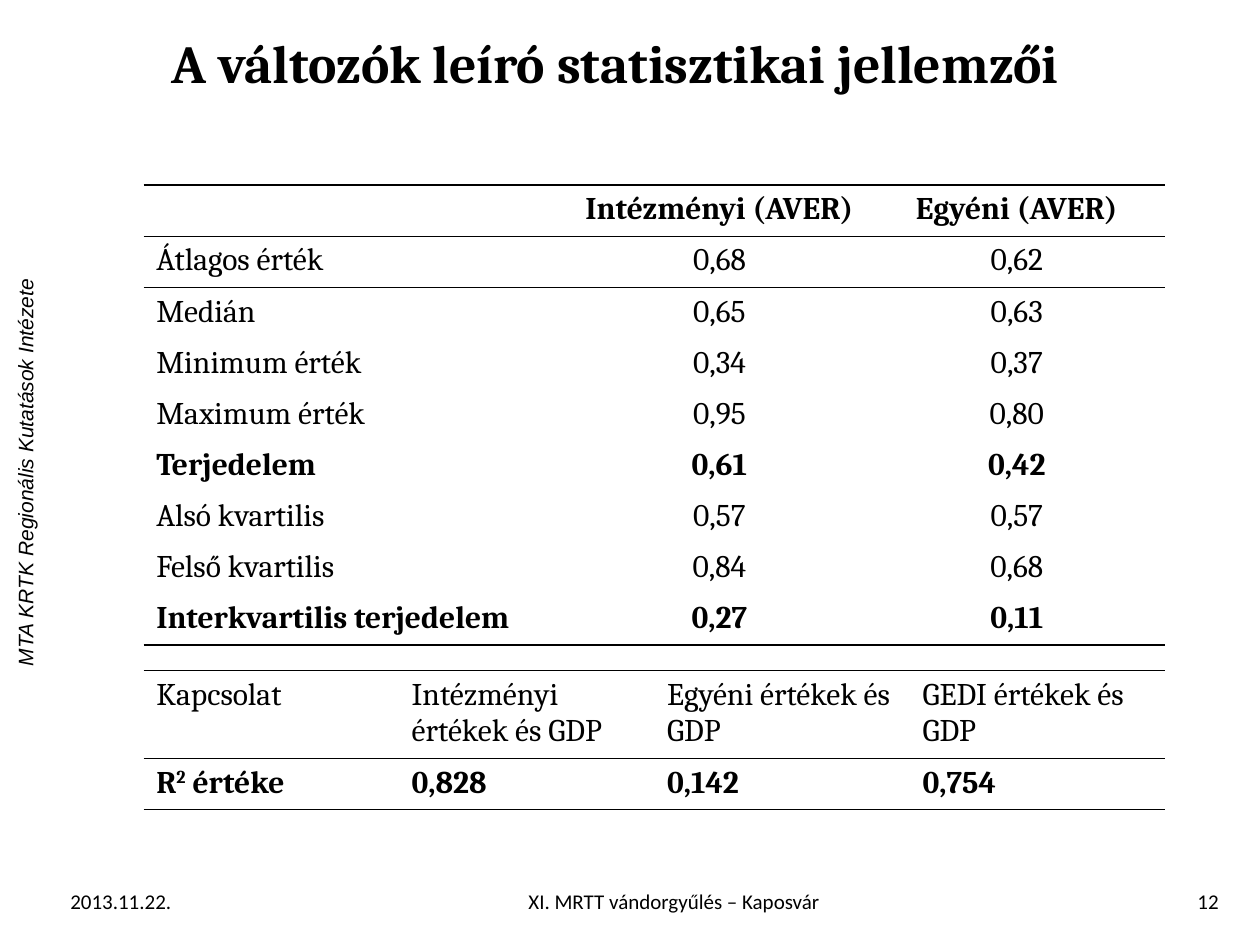
from dataclasses import dataclass

from lxml.etree import SubElement
from pptx import Presentation
from pptx.dml.color import RGBColor
from pptx.enum.text import MSO_ANCHOR, PP_ALIGN
from pptx.oxml.ns import qn
from pptx.util import Inches, Pt


@dataclass(frozen=True)
class Theme:
    ink: str = "000000"
    serif: str = "Cambria"
    sans: str = "Calibri"
    side: str = "Arial"
    title_size: float = 30.6
    table_size: float = 18
    small_size: float = 12
    rule_width: float = 1


@dataclass(frozen=True)
class Box:
    """Area in grid units; the slide is 100 columns by 75 rows."""
    left: float
    top: float
    width: float
    height: float

    def lengths(self):
        return [grid(value) for value in (self.left, self.top, self.width, self.height)]


THEME = Theme()
COLUMNS, ROWS = 100, 75
PLAIN_TABLE_STYLE = "{2D5ABB26-0587-4C30-8999-92F81FD0307C}"

STATISTICS = [
    ("", "Intézményi (AVER)", "Egyéni (AVER)"),
    ("Átlagos érték", "0,68", "0,62"),
    ("Medián", "0,65", "0,63"),
    ("Minimum érték", "0,34", "0,37"),
    ("Maximum érték", "0,95", "0,80"),
    ("Terjedelem", "0,61", "0,42"),
    ("Alsó kvartilis", "0,57", "0,57"),
    ("Felső kvartilis", "0,84", "0,68"),
    ("Interkvartilis terjedelem", "0,27", "0,11"),
]
BOLD_STATISTICS = {0, 5, 8}
RELATIONS = [
    ("Kapcsolat", "Intézményi értékek és GDP", "Egyéni értékek és GDP", "GEDI értékek és GDP"),
    ("", "0,828", "0,142", "0,754"),
]


def grid(units):
    return Inches(units / 10)


def style_span(span, font, size, bold=False, italic=False):
    span.font.name = font
    span.font.size = Pt(size)
    span.font.bold = bold
    span.font.italic = italic
    span.font.color.rgb = RGBColor.from_string(THEME.ink)


def add_text(page, area, text, font, size, align, anchor=MSO_ANCHOR.MIDDLE, **style):
    box = page.shapes.add_textbox(*area.lengths())
    frame = box.text_frame
    frame.word_wrap = True
    frame.vertical_anchor = anchor
    frame.text = text
    para = frame.paragraphs[0]
    para.alignment = align
    style_span(para.runs[0], font, size, **style)
    return box


def add_rule(cell, side):
    """Draw a thin line on the top (T) or bottom (B) of a cell."""
    line = SubElement(cell._tc.get_or_add_tcPr(), qn(f"a:ln{side}"), w=str(Pt(THEME.rule_width)))
    fill = SubElement(line, qn("a:solidFill"))
    SubElement(fill, qn("a:srgbClr"), val=THEME.ink)


def add_ruled_table(page, area, data, widths, heights, bold_rows, ruled_rows, value_align):
    """Add a table with a line above the first row and below each of ruled_rows."""
    table = page.shapes.add_table(len(data), len(widths), *area.lengths()).table
    table._tbl.tblPr.find(qn("a:tableStyleId")).text = PLAIN_TABLE_STYLE
    table.first_row = table.horz_banding = False
    for column, width in zip(table.columns, widths):
        column.width = grid(width)
    for row, height in zip(table.rows, heights):
        row.height = grid(height)
    for r, values in enumerate(data):
        for c, value in enumerate(values):
            cell = table.cell(r, c)
            if r == 0 or r - 1 in ruled_rows:
                add_rule(cell, "T")
            if r in ruled_rows:
                add_rule(cell, "B")
            cell.fill.background()
            cell.text = value
            para = cell.text_frame.paragraphs[0]
            para.alignment = value_align if c else PP_ALIGN.LEFT
            para.font.size = Pt(THEME.table_size)
            for span in para.runs:
                style_span(span, THEME.serif, THEME.table_size, bold=r in bold_rows)
    return table


def add_statistics(page, area):
    value_width = 23.6
    widths = [area.width - 2 * value_width, value_width, value_width]
    count = len(STATISTICS)
    add_ruled_table(page, area, STATISTICS, widths, [area.height / count] * count,
                    BOLD_STATISTICS, {0, count - 1}, PP_ALIGN.CENTER)


def add_relations(page, area):
    value_height = 4.06
    table = add_ruled_table(page, area, RELATIONS, [area.width / 4] * 4,
                            [area.height - value_height, value_height],
                            {1}, {0, 1}, PP_ALIGN.LEFT)
    para = table.cell(1, 0).text_frame.paragraphs[0]
    for text, raised in (("R", False), ("2", True), (" értéke", False)):
        span = para.add_run()
        span.text = text
        style_span(span, THEME.serif, THEME.table_size, bold=True)
        if raised:
            span.font._element.set("baseline", "30000")


def add_side_label(page, area):
    label = add_text(page, area, "MTA KRTK Regionális Kutatások Intézete", THEME.side,
                     THEME.small_size, PP_ALIGN.CENTER, MSO_ANCHOR.TOP, italic=True)
    label.rotation = 270


def add_footer(page, area):
    date_width, number_width, gap = 10.7, 6.8, 0.8
    middle_left = area.left + date_width + gap
    number_left = area.left + area.width - number_width
    parts = [
        ("2013.11.22.", area.left, date_width, PP_ALIGN.LEFT),
        ("XI. MRTT vándorgyűlés – Kaposvár", middle_left, number_left - middle_left, PP_ALIGN.CENTER),
        ("12", number_left, number_width, PP_ALIGN.RIGHT),
    ]
    for text, left, width, align in parts:
        add_text(page, Box(left, area.top, width, area.height), text,
                 THEME.sans, THEME.small_size, align)


def main():
    deck = Presentation()
    deck.slide_width, deck.slide_height = grid(COLUMNS), grid(ROWS)
    page = deck.slides.add_slide(deck.slide_layouts[6])
    add_side_label(page, Box(-35.5, 36, 75, 3))
    add_text(page, Box(10.6, 0, 76.4, 9.9), "A változók leíró statisztikai jellemzői",
             THEME.serif, THEME.title_size, PP_ALIGN.CENTER, bold=True)
    add_statistics(page, Box(11.4, 14.7, 81.1, 36.5))
    add_relations(page, Box(11.4, 53.2, 81.1, 10.9))
    add_footer(page, Box(4.6, 69.5, 93.1, 4))
    deck.save("out.pptx")


if __name__ == "__main__":
    main()
